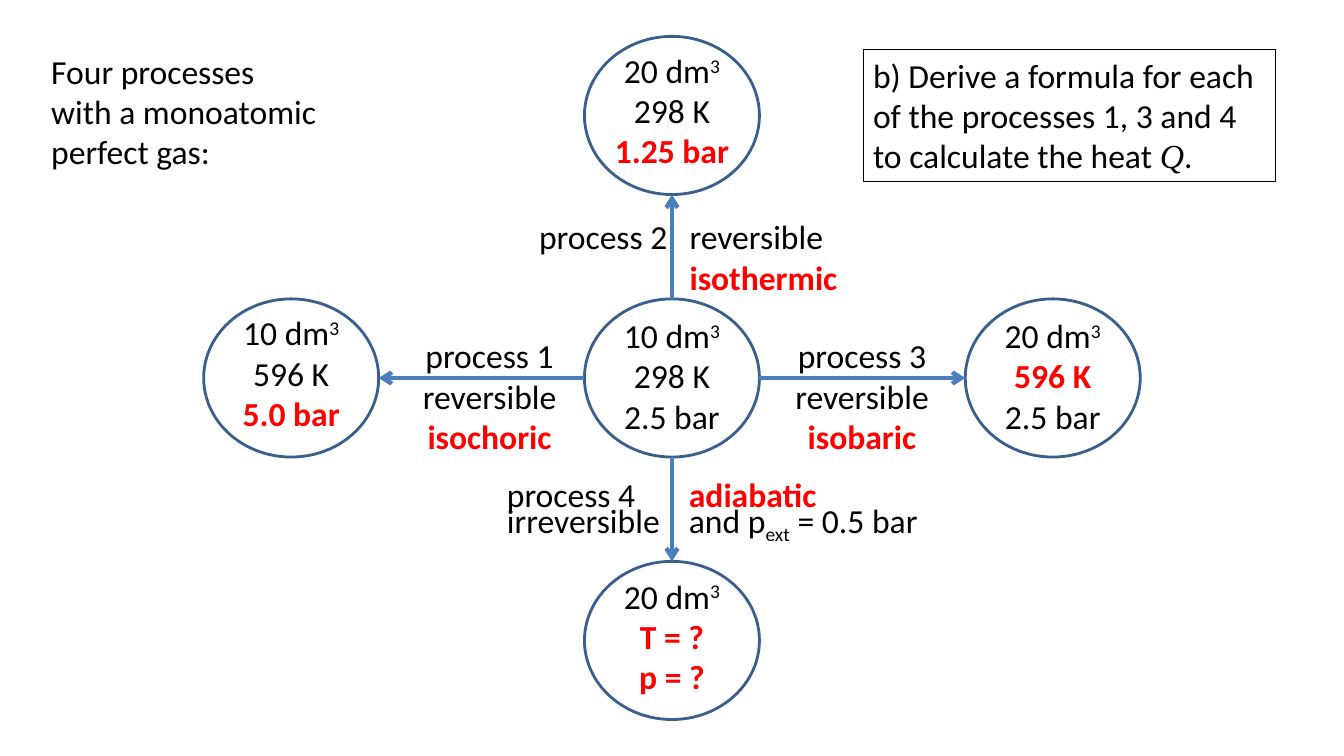
from dataclasses import dataclass
from typing import Any

from lxml import etree
from pptx import Presentation
from pptx.dml.color import RGBColor
from pptx.enum import shapes, text
from pptx.oxml import ns
from pptx.util import Pt

BLACK, RED = "000000", "FF0000"
RING_LINE, ARROW_LINE = "3A5F8C", "4B7EBC"
CENTER_X, CENTER_Y = 480, 270
STEP_X, STEP_Y = 272, 187.5
RING_W, RING_H = 125, 113
LABEL_W, LABEL_H = 113, 94.5


@dataclass(frozen=True)
class Span:
    text: str
    color: str = BLACK
    bold: bool = False
    italic: bool = False
    font: str = "Calibri"
    baseline: int = 0


def red(words: str) -> Span:
    return Span(words, RED, bold=True)


@dataclass(frozen=True)
class State:
    """A gas state, placed in steps from the central one."""
    column: int
    row: int
    volume: str
    temperature: Span
    pressure: Span
    label_drop: float


@dataclass(frozen=True)
class Note:
    left: float
    top: float
    width: float
    height: float
    lines: list[list[Span]]
    align: Any = text.PP_ALIGN.LEFT
    spacing: float | None = None
    tab: float | None = None


STATES = [
    State(0, 0, "10 dm", Span("298 K"), Span("2.5 bar"), 8),
    State(1, 0, "20 dm", Span("596 K", RED, True), Span("2.5 bar"), 8),
    State(0, -1, "20 dm", Span("298 K"), red("1.25 bar"), 6),
    State(-1, 0, "10 dm", Span("596 K"), red("5.0 bar"), 6),
    State(0, 1, "20 dm", red("T = ?"), red("p = ?"), 6.5),
]

NOTES = [
    Note(29.5, 32.5, 247, 94.5, [
        [Span("Four processes"), Span("\n"), Span("with a monoatomic")],
        [Span("perfect gas:")]]),
    Note(378, 151, 272, 65.5, [
        [Span("process 2\treversible")],
        [Span("\t"), red("isothermic")]], tab=107.5),
    Note(355, 342, 323, 52.5, [
        [Span("process 4\t"), red("adiabatic")],
        [Span("irreversible\tand p"), Span("ext", baseline=-25000),
         Span(" = 0.5 bar")]], spacing=22, tab=130),
] + [
    Note(left, 236, 124.5, 94.5,
         [[Span(name)], [Span("reversible")], [red(kind)]], text.PP_ALIGN.CENTER)
    for left, name, kind in [(287.5, "process 1", "isochoric"),
                             (553.5, "process 3", "isobaric")]
]

TASK = [[Span("b) Derive a formula for each of the processes 1, 3 and 4 "
              "to calculate the heat "),
         Span("Q", italic=True, font="Times New Roman"), Span(".")]]


def rgb(color: str) -> RGBColor:
    return RGBColor.from_string(color)


def add_span(para: Any, span: Span) -> None:
    if span.text == "\n":
        para.add_line_break()
        return
    run = para.add_run()
    run.text = span.text
    run.font.name, run.font.size = span.font, Pt(24)
    run.font.bold, run.font.italic = span.bold, span.italic
    run.font.color.rgb = rgb(span.color)
    if span.baseline:
        run._r.get_or_add_rPr().set("baseline", str(span.baseline))


def write(box: Any, lines: list[list[Span]], align: Any = text.PP_ALIGN.LEFT,
          spacing: float | None = None, tab: float | None = None) -> None:
    frame = box.text_frame
    frame.word_wrap = True
    frame.vertical_anchor = text.MSO_ANCHOR.TOP
    for index, line in enumerate(lines):
        para = frame.add_paragraph() if index else frame.paragraphs[0]
        para.alignment = align
        if spacing:
            para.line_spacing = Pt(spacing)
        if tab:
            stops = etree.SubElement(para._p.get_or_add_pPr(), ns.qn("a:tabLst"))
            etree.SubElement(stops, ns.qn("a:tab"), pos=str(int(Pt(tab))), algn="l")
        for span in line:
            add_span(para, span)


def add_outline(parent: Any, kind: Any, left: float, top: float, width: float,
                height: float, color: str, weight: float) -> Any:
    shape = parent.add_shape(kind, Pt(left), Pt(top), Pt(width), Pt(height))
    shape.shadow.inherit = False
    shape.fill.background()
    shape.line.color.rgb = rgb(color)
    shape.line.width = Pt(weight)
    return shape


def add_state(page: Any, state: State) -> None:
    x = CENTER_X + state.column * STEP_X
    top = CENTER_Y + state.row * STEP_Y - RING_H / 2
    group = page.shapes.add_group_shape().shapes
    add_outline(group, shapes.MSO_SHAPE.OVAL, x - RING_W / 2, top,
                RING_W, RING_H, RING_LINE, 2)
    label = group.add_textbox(Pt(x - LABEL_W / 2), Pt(top + state.label_drop),
                              Pt(LABEL_W), Pt(LABEL_H))
    write(label, [[Span(state.volume), Span("3", baseline=30000)],
                  [state.temperature], [state.pressure]], text.PP_ALIGN.CENTER)


def add_arrow(page: Any, column: int, row: int) -> None:
    """Joins the rim of the central state to the rim of an outer one."""
    start = (CENTER_X + column * RING_W / 2, CENTER_Y + row * RING_H / 2)
    end = (CENTER_X + column * (STEP_X - RING_W / 2),
           CENTER_Y + row * (STEP_Y - RING_H / 2))
    arrow = page.shapes.add_connector(shapes.MSO_CONNECTOR.STRAIGHT,
                                      *map(Pt, start + end))
    arrow.line.color.rgb = rgb(ARROW_LINE)
    arrow.line.width = Pt(3)
    etree.SubElement(arrow.line._get_or_add_ln(), ns.qn("a:tailEnd"), type="arrow")
    etree.SubElement(arrow._element.spPr, ns.qn("a:effectLst"))


def main() -> None:
    deck = Presentation()
    deck.slide_width, deck.slide_height = Pt(960), Pt(540)
    page = deck.slides.add_slide(deck.slide_layouts[6])

    # States and the processes between them
    for state in STATES:
        add_state(page, state)
        if state.column or state.row:
            add_arrow(page, state.column, state.row)

    # Introduction and process names
    for note in NOTES:
        box = page.shapes.add_textbox(Pt(note.left), Pt(note.top),
                                      Pt(note.width), Pt(note.height))
        write(box, note.lines, note.align, note.spacing, note.tab)

    # Framed task
    task = add_outline(page.shapes, shapes.MSO_SHAPE.RECTANGLE,
                       616.5, 35.5, 294.5, 94.5, BLACK, 0.75)
    write(task, TASK)

    deck.save("out.pptx")


if __name__ == "__main__":
    main()
